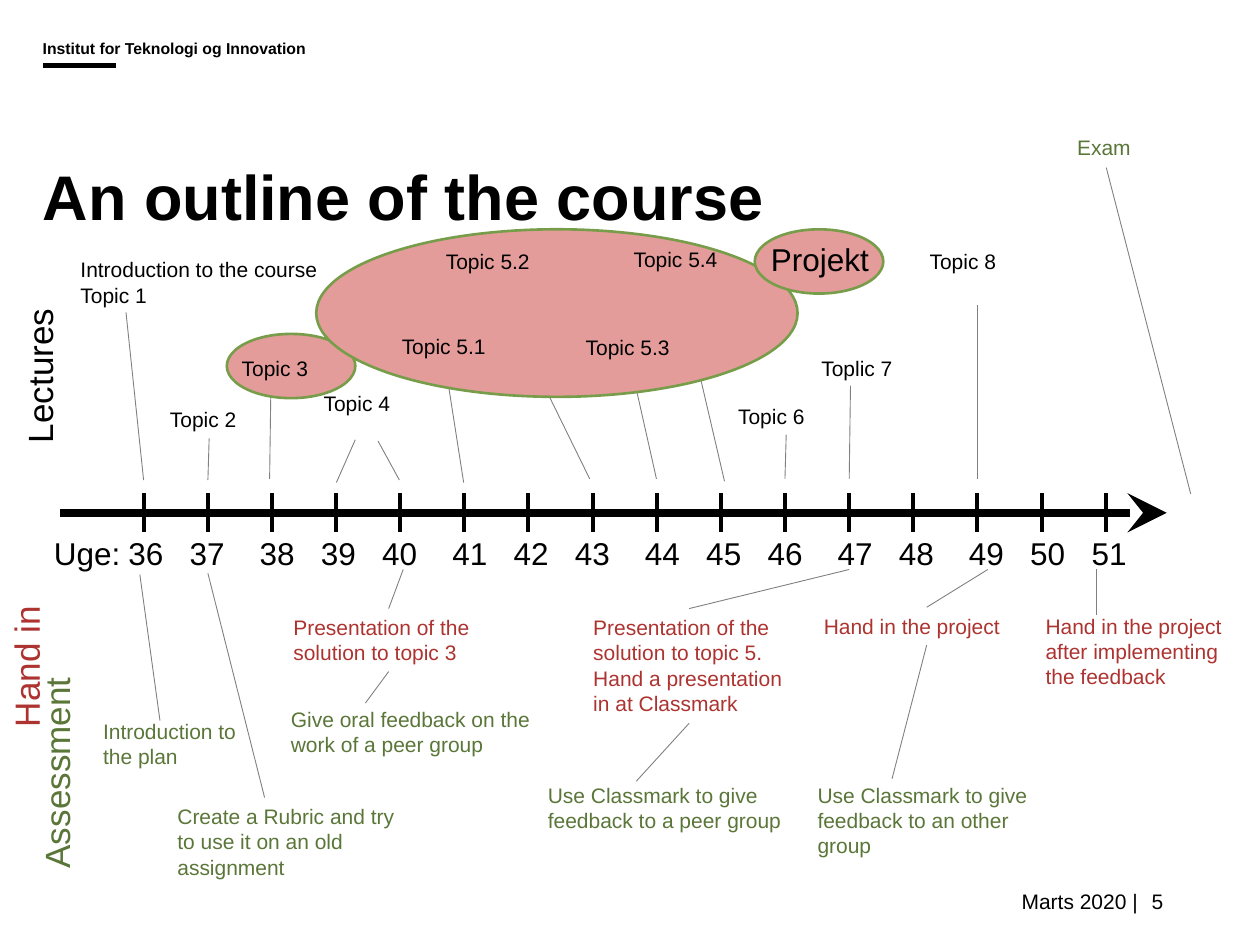
"""Build the course outline slide: a week timeline with lectures, hand-ins and assessment."""
from dataclasses import dataclass
from itertools import accumulate

from lxml.etree import SubElement
from pptx import Presentation
from pptx.dml.color import RGBColor
from pptx.enum.shapes import MSO_CONNECTOR as Connector, MSO_SHAPE as Preset
from pptx.enum.text import MSO_ANCHOR as Anchor, MSO_AUTO_SIZE as AutoSize, PP_ALIGN as Align
from pptx.oxml.ns import qn
from pptx.util import Inches, Pt


@dataclass(frozen=True)
class Theme:
    font: str = "Arial"
    black: RGBColor = RGBColor.from_string("000000")
    white: RGBColor = RGBColor.from_string("FFFFFF")
    red: RGBColor = RGBColor.from_string("AD3330")
    green: RGBColor = RGBColor.from_string("5A7638")
    gray: RGBColor = RGBColor.from_string("808080")
    pink: RGBColor = RGBColor.from_string("E39C9A")
    outline: RGBColor = RGBColor.from_string("789D4A")
    header: int = 9
    label: int = 12
    week: int = 18
    section: int = 20
    title: int = 36


theme = Theme()
presentation = Presentation()
presentation.slide_width, presentation.slide_height = Inches(10), Inches(7.5)
slide = presentation.slides.add_slide(presentation.slide_layouts[5])
shapes = slide.shapes


def write(text, left, top, width, height, size=theme.label, color=theme.black, bold=False,
          align=Align.LEFT, anchor=Anchor.TOP, rotation=0, tabs=(), shape=None):
    frame_size = [Inches(length) for length in (left, top, width, height)]
    shape = shape or shapes.add_textbox(*frame_size)
    shape.left, shape.top, shape.width, shape.height = frame_size
    shape.rotation = rotation
    frame = shape.text_frame
    frame.text = text
    frame.word_wrap = True
    frame.vertical_anchor = anchor
    frame.auto_size = AutoSize.SHAPE_TO_FIT_TEXT if anchor == Anchor.TOP else AutoSize.NONE
    for paragraph in frame.paragraphs:
        paragraph.alignment = align
        if tabs:
            tab_list = SubElement(paragraph._p.get_or_add_pPr(), qn("a:tabLst"))
            for position in tabs:
                SubElement(tab_list, qn("a:tab"), pos=str(Inches(position)), algn="l")
        font = paragraph.font
        font.name, font.size, font.bold = theme.font, Pt(size), bold
        font.color.rgb = color
    return shape


def draw_line(x1, y1, x2, y2, color=theme.gray, width=0.5):
    line = shapes.add_connector(Connector.STRAIGHT, *[Inches(value) for value in (x1, y1, x2, y2)])
    line.line.color.rgb, line.line.width = color, Pt(width)
    SubElement(line._element.spPr, qn("a:effectLst"))
    return line


title = write("An outline of the course", 0.24, 1.1, 6.84, 0.97, size=theme.title, bold=True,
              anchor=Anchor.MIDDLE, shape=shapes.title)
title.text_frame.paragraphs[0].line_spacing = 0.9
draw_line(0.34, 0.52, 0.92, 0.52, theme.black, 3)
write("Institut for Teknologi og Innovation", 0.24, 0.26, 4.31, 0.25, size=theme.header, bold=True)
for text, left, width in [("Marts 2020 |", 5.75, 3.38), ("5", 7.08, 2.25)]:
    write(text, left, 6.95, width, 0.4, align=Align.RIGHT, anchor=Anchor.MIDDLE)

axis = draw_line(0.48, 4.07, 9.26, 4.07, theme.black, 4.5)
SubElement(axis.line._get_or_add_ln(), qn("a:tailEnd"), type="stealth", w="lg", len="lg")

week_cells = [(Preset.RECTANGLE, 1.14 + 0.509 * index, 3.81, 0.51, 0.52, None, theme.black, 2.25)
              for index in range(15)]
cell_covers = [(Preset.RECTANGLE, left, top, width, 0.74, theme.white, theme.white, 1)
               for left, top, width in [(0.84, 3.17, 8.12), (1.01, 4.23, 7.86)]]
ellipses = [(Preset.OVAL, *place, theme.pink, theme.outline, 1.5)
            for place in [(1.8, 2.65, 1.02, 0.51), (2.51, 1.82, 3.82, 1.33), (5.99, 1.82, 1.02, 0.51)]]
highlights = []
for preset, left, top, width, height, fill, outline, weight in week_cells + cell_covers + ellipses:
    shape = shapes.add_shape(preset, Inches(left), Inches(top), Inches(width), Inches(height))
    shape.shadow.inherit = False
    if fill is None:
        shape.fill.background()
    else:
        shape.fill.solid()
        shape.fill.fore_color.rgb = fill
    shape.line.color.rgb, shape.line.width = outline, Pt(weight)
    if preset == Preset.OVAL:
        highlights.append(shape)

weeks = range(36, 52)
week_gaps = [0.556 if week in (38, 41, 44, 47, 49) else 0.4865 for week in weeks[1:]]
write("\t".join(["Uge:", *map(str, weeks)]), 0.33, 4.19, 8.8, 0.4, size=theme.week,
      tabs=list(accumulate(week_gaps, initial=0.59)))

for text, left, top, width, color in [
    ("Lectures", -0.45, 2.63, 1.53, theme.black),
    ("Hand in", -0.66, 4.78, 1.74, theme.red),
    ("Assessment", -0.42, 5.9, 1.74, theme.green),
]:
    write(text, left, top, width, 0.44, size=theme.section, color=color, rotation=270)

labels = {
    theme.black: [
        ("Introduction to the course\nTopic 1", 0.54, 1.99, 2.12, 0.5),
        ("Topic 2", 1.25, 3.18, 0.82, 0.3),
        ("Topic 3", 1.82, 2.77, 1.15, 0.3),
        ("Topic 4", 2.47, 3.05, 1.58, 0.3),
        ("Topic 5.1", 3.09, 2.6, 0.89, 0.3),
        ("Topic 5.2", 3.44, 1.92, 0.93, 0.3),
        ("Topic 5.3", 4.55, 2.61, 0.92, 0.3),
        ("Topic 5.4", 4.93, 1.91, 0.89, 0.3),
        ("Topic 6", 5.76, 3.15, 0.96, 0.3),
        ("Toplic 7", 6.42, 2.77, 1.15, 0.3),
        ("Topic 8", 7.28, 1.92, 2.04, 0.3),
    ],
    theme.red: [
        ("Presentation of the solution to topic 3", 2.23, 4.83, 1.71, 0.5),
        ("Presentation of the solution to topic 5. Hand a presentation in at Classmark",
         4.61, 4.83, 1.72, 0.91),
        ("Hand in the project", 6.44, 4.82, 1.83, 0.3),
        ("Hand in the project after implementing the feedback", 8.2, 4.82, 1.7, 0.71),
    ],
    theme.green: [
        ("Introduction to the plan", 0.72, 5.65, 1.34, 0.5),
        ("Create a Rubric and try to use it on an old assignment", 1.31, 6.33, 2.06, 0.71),
        ("Give oral feedback on the work of a peer group", 2.21, 5.56, 2.32, 0.5),
        ("Use Classmark to give feedback to a peer group", 4.25, 6.16, 2.07, 0.5),
        ("Use Classmark to give feedback to an other group", 6.39, 6.16, 2.07, 0.71),
        ("Exam", 8.45, 1.02, 1.5, 0.3),
    ],
}
boxes = {}
for color, entries in labels.items():
    for text, *place in entries:
        boxes[text] = write(text, *place, color=color)

for ends in [
    (1.14, 3.81, 1, 2.48), (2.14, 3.8, 2.15, 3.06), (2.67, 3.83, 2.82, 3.49),
    (3.17, 3.81, 3, 3.5), (6.74, 3.8, 6.75, 3.06), (7.76, 3.8, 7.76, 2.42),
    (8.7, 4.52, 8.7, 4.88), (1.11, 4.56, 1.27, 5.72), (1.65, 4.55, 2.1, 6.33),
    (9.45, 3.92, 8.78, 1.33),
]:
    draw_line(*ends)

top_side, bottom_side = 0, 2
presentation_3, presentation_5, project = [entry[0] for entry in labels[theme.red][:3]]
for x, y, text, side in [
    (1.65, 3.81, "Topic 2", bottom_side),
    (3.68, 3.83, "Topic 5.1", bottom_side),
    (4.68, 3.8, "Topic 5.2", bottom_side),
    (5.21, 3.8, "Topic 5.3", bottom_side),
    (5.75, 3.82, "Topic 5.4", bottom_side),
    (6.23, 3.8, "Topic 6", bottom_side),
    (3.2, 4.52, presentation_3, top_side),
    (2.9, 5.58, presentation_3, bottom_side),
    (6.74, 4.52, presentation_5, top_side),
    (5.05, 6.2, presentation_5, bottom_side),
    (7.84, 4.52, project, top_side),
    (7.08, 6.18, project, bottom_side),
]:
    draw_line(x, y, x, y).end_connect(boxes[text], side)

highlighted_topics = ("Topic 3", "Topic 5.1", "Topic 5.2", "Topic 5.3", "Topic 5.4")
for shape in highlights + [boxes[text] for text in highlighted_topics]:
    shapes._spTree.append(shape._element)
write("Projekt", 6.02, 1.86, 1.12, 0.4, size=theme.week)

presentation.save("out.pptx")
